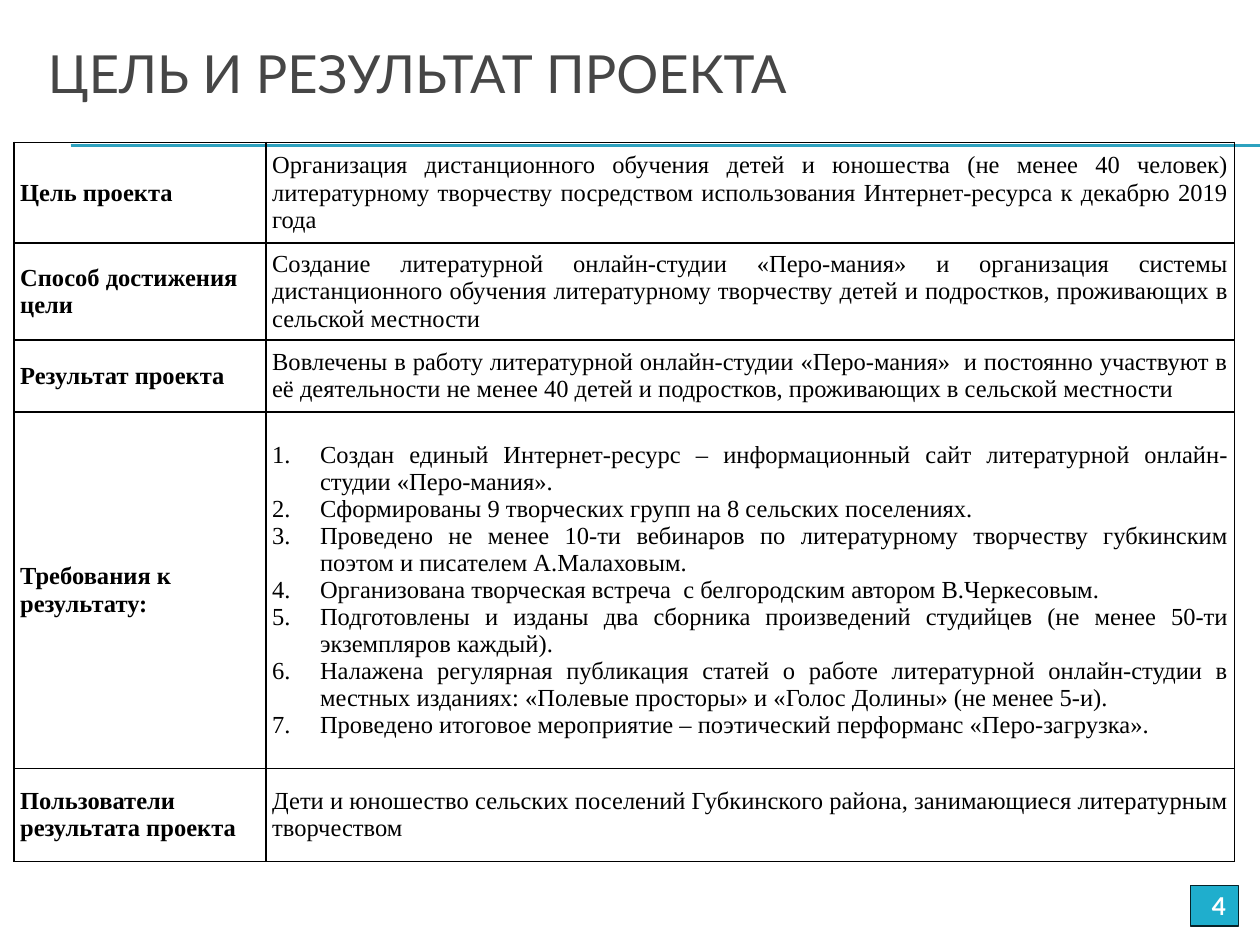
import pptx
import pptx.util
import pptx.dml.color
import pptx.enum.shapes
import pptx.enum.text
import pptx.oxml
import pptx.oxml.ns
from dataclasses import dataclass
from lxml import etree

Inches = pptx.util.Inches
Pt = pptx.util.Pt
ALIGN = pptx.enum.text.PP_ALIGN
MIDDLE = pptx.enum.text.MSO_ANCHOR.MIDDLE

TITLE = "ЦЕЛЬ И РЕЗУЛЬТАТ ПРОЕКТА"
PAGE_NUMBER = "4"
ROWS = [
    (0.8, "Цель проекта",
     "Организация дистанционного обучения детей и юношества (не менее 40 человек) литературному творчеству посредством использования Интернет-ресурса к декабрю 2019 года"),
    (0.77, "Способ достижения цели",
     "Создание литературной онлайн-студии «Перо-мания» и организация системы дистанционного обучения литературному творчеству детей и подростков, проживающих в сельской местности"),
    (0.57, "Результат проекта",
     "Вовлечены в работу литературной онлайн-студии «Перо-мания»  и постоянно участвуют в её деятельности не менее 40 детей и подростков, проживающих в сельской местности"),
    (2.83, "Требования к результату:", [
        "Создан единый Интернет-ресурс – информационный сайт литературной онлайн-студии «Перо-мания».",
        "Сформированы 9 творческих групп на 8 сельских поселениях.",
        "Проведено не менее 10-ти вебинаров по литературному творчеству губкинским поэтом и писателем А.Малаховым.",
        "Организована творческая встреча  с белгородским автором В.Черкесовым.",
        "Подготовлены и изданы два сборника произведений студийцев (не менее 50-ти экземпляров каждый).",
        "Налажена регулярная публикация статей о работе литературной онлайн-студии в местных изданиях: «Полевые просторы» и «Голос Долины» (не менее 5-и).",
        "Проведено итоговое мероприятие – поэтический перформанс «Перо-загрузка».",
    ]),
    (0.74, "Пользователи результата проекта",
     "Дети и юношество сельских поселений Губкинского района, занимающиеся литературным творчеством"),
]
COLUMNS = (2, 7.69)
RULES = (1.15, 1.16)


@dataclass(frozen=True)
class Theme:
    heading_font: str = "Lato"
    body_font: str = "Times New Roman"
    title_size: int = 30
    body_size: int = 14
    heading: str = "464646"
    text: str = "000000"
    inverse: str = "FFFFFF"
    rule: str = "2DA2BF"
    badge: str = "1FAECD"
    badge_line: str = "062329"


THEME = Theme()


def rgb(value):
    return pptx.dml.color.RGBColor.from_string(value)


def write(frame, text, font=THEME.body_font, size=THEME.body_size, color=THEME.text,
          bold=False, align=ALIGN.LEFT):
    lines = text if isinstance(text, list) else [text]
    for index, line in enumerate(lines):
        paragraph = frame.paragraphs[0] if index == 0 else frame.add_paragraph()
        paragraph.alignment = align
        if isinstance(text, list):
            number_paragraph(paragraph)
        run = paragraph.add_run()
        run.text = line
        run.font.name, run.font.size, run.font.bold = font, Pt(size), bold
        run.font.color.rgb = rgb(color)


def number_paragraph(paragraph):
    properties = paragraph._p.get_or_add_pPr()
    properties.set("marL", str(Inches(0.38)))
    properties.set("indent", str(-Inches(0.38)))
    etree.SubElement(properties, pptx.oxml.ns.qn("a:buAutoNum"), type="arabicPeriod")


def add_borders(cell):
    properties = cell._tc.get_or_add_tcPr()
    for side in "LRTB":
        properties.append(pptx.oxml.parse_xml(
            f'<a:ln{side} {pptx.oxml.ns.nsdecls("a")} w="{Pt(1)}"><a:solidFill>'
            f'<a:srgbClr val="{THEME.text}"/></a:solidFill></a:ln{side}>'))


def add_rules(slide):
    for y in RULES:
        rule = slide.shapes.add_connector(
            pptx.enum.shapes.MSO_CONNECTOR.STRAIGHT,
            Inches(0.56), Inches(y), Inches(10), Inches(y))
        rule.line.color.rgb = rgb(THEME.rule)
        rule.line.width = Pt(0.75)
        etree.SubElement(rule._element.spPr, pptx.oxml.ns.qn("a:effectLst"))


def add_title(slide):
    title = slide.shapes.title
    title.left, title.top = Inches(0.28), Inches(0.21)
    title.width, title.height = Inches(9.36), Inches(0.73)
    title.text_frame.vertical_anchor = MIDDLE
    write(title.text_frame, TITLE, font=THEME.heading_font,
          size=THEME.title_size, color=THEME.heading)


def add_project_table(slide):
    height = sum(row[0] for row in ROWS)
    table = slide.shapes.add_table(
        len(ROWS), len(COLUMNS), Inches(0.11), Inches(1.13),
        Inches(sum(COLUMNS)), Inches(height)).table
    table.first_row = table.horz_banding = False
    for column, width in zip(table.columns, COLUMNS):
        column.width = Inches(width)
    for row, (row_height, label, description) in zip(table.rows, ROWS):
        row.height = Inches(row_height)
        for cell in row.cells:
            cell.margin_left = cell.margin_right = Inches(0.05)
            cell.margin_top = cell.margin_bottom = Inches(0.05)
            cell.vertical_anchor = MIDDLE
            add_borders(cell)
            cell.fill.background()
        write(row.cells[0].text_frame, label, bold=True)
        write(row.cells[1].text_frame, description, align=ALIGN.JUSTIFY)


def add_page_badge(slide):
    badge = slide.shapes.add_shape(
        pptx.enum.shapes.MSO_SHAPE.RECTANGLE,
        Inches(9.45), Inches(7.03), Inches(0.38), Inches(0.32))
    badge.shadow.inherit = False
    badge.fill.solid()
    badge.fill.fore_color.rgb = rgb(THEME.badge)
    badge.line.color.rgb = rgb(THEME.badge_line)
    badge.line.width = Pt(0.75)
    badge.text_frame.vertical_anchor = MIDDLE
    write(badge.text_frame, PAGE_NUMBER, font=THEME.heading_font,
          color=THEME.inverse, bold=True, align=ALIGN.RIGHT)


def main():
    presentation = pptx.Presentation()
    presentation.slide_width, presentation.slide_height = Inches(10), Inches(7.5)
    slide = presentation.slides.add_slide(presentation.slide_layouts[5])
    add_rules(slide)
    add_title(slide)
    add_project_table(slide)
    add_page_badge(slide)
    presentation.save("out.pptx")


if __name__ == "__main__":
    main()
